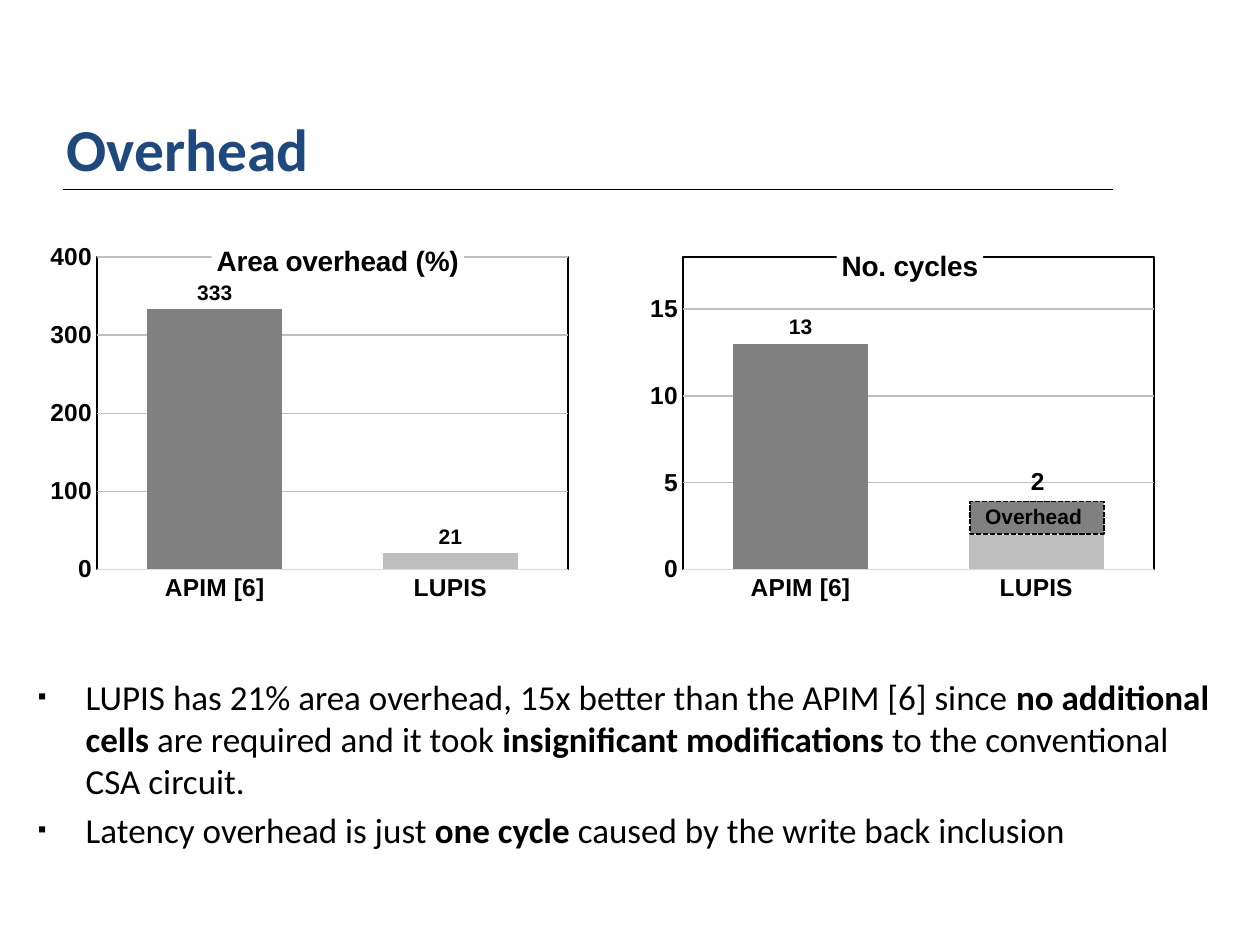
from dataclasses import dataclass

import pptx
import pptx.chart.data
import pptx.dml.color
import pptx.enum.chart
import pptx.enum.dml
import pptx.enum.shapes
import pptx.enum.text
import pptx.oxml
import pptx.oxml.ns
import pptx.util
from pptx.oxml.ns import qn

PX = 9144  # EMU in one px, at 100 px to the inch
BLACK = pptx.dml.color.RGBColor(0x00, 0x00, 0x00)
WHITE = pptx.dml.color.RGBColor(0xFF, 0xFF, 0xFF)
NAVY = pptx.dml.color.RGBColor(0x1F, 0x49, 0x7D)
DARK_GREY = pptx.dml.color.RGBColor(0x80, 0x80, 0x80)
LIGHT_GREY = pptx.dml.color.RGBColor(0xBF, 0xBF, 0xBF)
AXIS_GREY = pptx.dml.color.RGBColor(0xD9, 0xD9, 0xD9)
CATEGORIES = ("APIM [6]", "LUPIS")
BAR_COLORS = (DARK_GREY, LIGHT_GREY)


@dataclass(frozen=True)
class Box:
    left: int
    top: int
    width: int
    height: int

    def emu(self) -> tuple[int, ...]:
        return tuple(px * PX for px in (self.left, self.top, self.width, self.height))


@dataclass(frozen=True)
class BarChart:
    title: str
    box: Box
    values: tuple[int, int]
    maximum: int
    step: int
    title_left: int
    title_top: int


@dataclass(frozen=True)
class Run:
    text: str
    bold: bool = False


@dataclass(frozen=True)
class Label:
    text: str
    box: Box
    size: int
    wrap: bool
    align: pptx.enum.text.PP_ALIGN


PLOT = Box(44, 15, 374, 248)  # inside each chart frame
CHARTS = (
    BarChart("No. cycles", Box(498, 189, 435, 300), (13, 2), 18, 5, 166, 4),
    BarChart("Area overhead (%)", Box(33, 189, 435, 300), (333, 21), 400, 100, 135, 0),
)
BULLETS = (
    (
        Run("LUPIS has 21% area overhead, 15x better than the APIM [6] since "),
        Run("no additional cells", True),
        Run(" are required and it took "),
        Run("insignificant modifications ", True),
        Run("to the conventional CSA circuit."),
    ),
    (
        Run("Latency overhead is just "),
        Run("one cycle ", True),
        Run("caused by the write back inclusion"),
    ),
)
LABELS = (
    Label("Overhead", Box(772, 395, 101, 30), 12, True, pptx.enum.text.PP_ALIGN.LEFT),
    Label("2", Box(808, 365, 31, 34), 14, False, pptx.enum.text.PP_ALIGN.CENTER),
)


def style_font(font, size: int, bold: bool = True, color=BLACK, name: str = "Arial") -> None:
    font.name = name
    font.size = pptx.util.Pt(size)
    font.bold = bold
    font.color.rgb = color


def place(shape, box: Box) -> None:
    shape.left, shape.top, shape.width, shape.height = box.emu()


def layout_xml(**settings):
    """Return a manual chart layout holding the given settings in order."""
    items = "".join(f'<c:{name} val="{value}"/>' for name, value in settings.items())
    return pptx.oxml.parse_xml(
        f'<c:layout {pptx.oxml.ns.nsdecls("c")}><c:manualLayout>{items}</c:manualLayout></c:layout>'
    )


def frame_plot(chart, box: Box) -> None:
    """Fix the inner plot area and give it a thin black border."""
    plot_area = chart._chartSpace.chart.plotArea
    for old in plot_area.findall(qn("c:layout")):
        plot_area.remove(old)
    plot_area.insert(0, layout_xml(
        layoutTarget="inner", xMode="edge", yMode="edge",
        x=PLOT.left / box.width, y=PLOT.top / box.height,
        w=PLOT.width / box.width, h=PLOT.height / box.height))
    plot_area.append(pptx.oxml.parse_xml(
        f'<c:spPr {pptx.oxml.ns.nsdecls("c", "a")}><a:noFill/><a:ln w="9525">'
        f'<a:solidFill><a:srgbClr val="{BLACK}"/></a:solidFill></a:ln></c:spPr>'
    ))


def add_chart_title(chart, item: BarChart) -> None:
    chart.has_title = True
    title = chart.chart_title
    run = title.text_frame.paragraphs[0].add_run()
    run.text = item.title
    style_font(run.font, 16)
    title.format.fill.solid()
    title.format.fill.fore_color.rgb = WHITE
    element = title._element
    overlay = element.find(qn("c:overlay"))
    overlay.set("val", "1")
    for old in element.findall(qn("c:layout")):
        element.remove(old)
    overlay.addprevious(layout_xml(xMode="edge", yMode="edge",
                                   x=item.title_left / item.box.width,
                                   y=item.title_top / item.box.height))


def add_bar_chart(slide, item: BarChart) -> None:
    data = pptx.chart.data.CategoryChartData()
    data.categories = CATEGORIES
    data.add_series(item.title, item.values)
    chart = slide.shapes.add_chart(
        pptx.enum.chart.XL_CHART_TYPE.COLUMN_CLUSTERED, *item.box.emu(), data
    ).chart
    chart.has_legend = False
    style_font(chart.font, 10, bold=False)
    add_chart_title(chart, item)
    frame_plot(chart, item.box)

    for axis in (chart.category_axis, chart.value_axis):
        axis.major_tick_mark = axis.minor_tick_mark = pptx.enum.chart.XL_TICK_MARK.NONE
        style_font(axis.tick_labels.font, 14)
    chart.category_axis.format.line.color.rgb = AXIS_GREY
    chart.category_axis.format.line.width = pptx.util.Pt(0.75)
    value_axis = chart.value_axis
    value_axis.minimum_scale = 0
    value_axis.maximum_scale = item.maximum
    value_axis.major_unit = item.step
    value_axis.format.line.fill.background()
    value_axis.major_gridlines.format.line.color.rgb = LIGHT_GREY
    value_axis.major_gridlines.format.line.width = pptx.util.Pt(0.75)

    plot = chart.plots[0]
    plot.gap_width = 75
    plot.vary_by_categories = False
    series = plot.series[0]
    for index, color in enumerate(BAR_COLORS):
        fill = series.points[index].format.fill
        fill.solid()
        fill.fore_color.rgb = color
    labels = series.data_labels
    labels.show_value = True
    labels.position = pptx.enum.chart.XL_LABEL_POSITION.OUTSIDE_END
    style_font(labels.font, 12)


def add_title(slide) -> None:
    title = slide.shapes.title
    place(title, Box(43, 84, 214, 67))
    title.text_frame.word_wrap = False
    title.text_frame.auto_size = pptx.enum.text.MSO_AUTO_SIZE.NONE
    para = title.text_frame.paragraphs[0]
    para.alignment = pptx.enum.text.PP_ALIGN.LEFT
    run = para.add_run()
    run.text = "Overhead"
    style_font(run.font, 34, color=NAVY, name="Calibri")


def add_bullets(slide) -> None:
    body = slide.placeholders[1]
    place(body, Box(20, 531, 959, 162))
    frame = body.text_frame
    frame.auto_size = pptx.enum.text.MSO_AUTO_SIZE.NONE
    for index, runs in enumerate(BULLETS):
        para = frame.add_paragraph() if index else frame.paragraphs[0]
        properties = para._p.get_or_add_pPr()
        properties.set("marL", str(38 * PX))
        properties.set("indent", str(-38 * PX))
        for tag, name, value in (("buSzPct", "val", "70000"), ("buFont", "typeface", "Arial"),
                                 ("buChar", "char", "▪")):
            properties.append(pptx.oxml.parse_xml(
                f'<a:{tag} {pptx.oxml.ns.nsdecls("a")} {name}="{value}"/>'))
        para.space_before = pptx.util.Pt(4 if index else 0)
        for item in runs:
            run = para.add_run()
            run.text = item.text
            style_font(run.font, 20, item.bold, name="Calibri")


def add_title_rule(slide) -> None:
    rule = slide.shapes.add_connector(
        pptx.enum.shapes.MSO_CONNECTOR.STRAIGHT, 50 * PX, 150 * PX, 883 * PX, 150 * PX)
    rule.line.color.rgb = BLACK
    rule.line.width = pptx.util.Pt(0.5)
    rule._element.spPr.append(pptx.oxml.parse_xml(
        f'<a:effectLst {pptx.oxml.ns.nsdecls("a")}/>'))


def add_overhead_block(slide) -> None:
    block = slide.shapes.add_shape(
        pptx.enum.shapes.MSO_SHAPE.RECTANGLE, *Box(770, 398, 106, 26).emu())
    block.shadow.inherit = False
    block.fill.solid()
    block.fill.fore_color.rgb = DARK_GREY
    block.line.color.rgb = BLACK
    block.line.width = pptx.util.Pt(1)
    block.line.dash_style = pptx.enum.dml.MSO_LINE.SQUARE_DOT


def add_label(slide, label: Label) -> None:
    frame = slide.shapes.add_textbox(*label.box.emu()).text_frame
    frame.word_wrap = label.wrap
    para = frame.paragraphs[0]
    para.alignment = label.align
    run = para.add_run()
    run.text = label.text
    style_font(run.font, label.size)


def main() -> None:
    deck = pptx.Presentation()
    deck.slide_width, deck.slide_height = 1000 * PX, 750 * PX
    slide = deck.slides.add_slide(deck.slide_layouts[1])
    add_title(slide)
    add_title_rule(slide)
    add_bullets(slide)
    for item in CHARTS:
        add_bar_chart(slide, item)
    add_overhead_block(slide)
    for label in LABELS:
        add_label(slide, label)
    deck.save("out.pptx")


if __name__ == "__main__":
    main()
